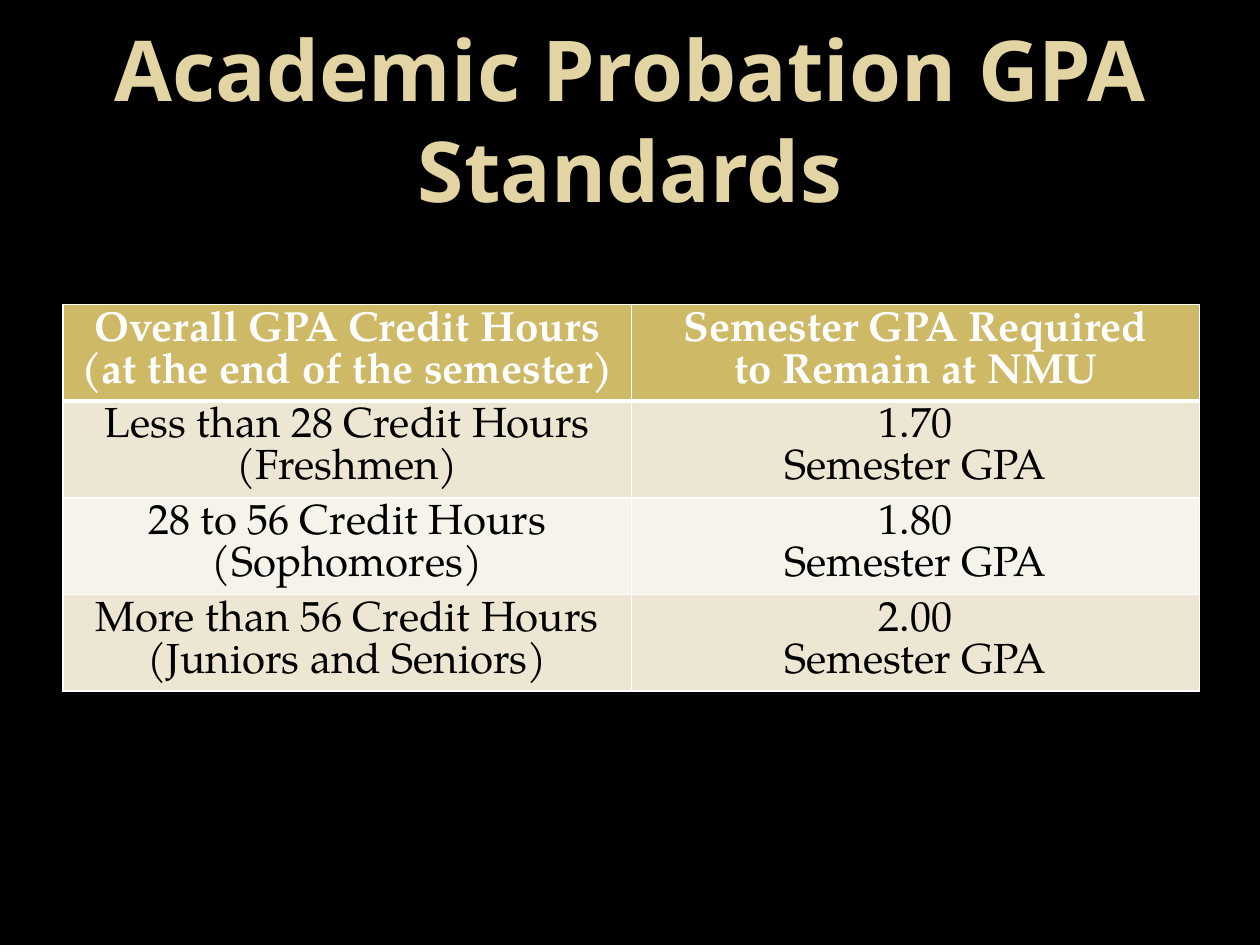
from dataclasses import dataclass

from lxml.etree import SubElement
from pptx import Presentation
from pptx.dml.color import RGBColor
from pptx.enum.text import MSO_ANCHOR, PP_ALIGN
from pptx.oxml.ns import qn
from pptx.util import Pt


@dataclass(frozen=True)
class Theme:
    background: str = "000000"
    title: str = "E2D5A3"
    header_fill: str = "CEB966"
    header_text: str = "FFFFFF"
    bands: tuple = ("EDE6D3", "F6F3EA")
    body_text: str = "000000"
    border: str = "FFFFFF"
    title_font: str = "Noto Sans"
    table_font: str = "TeX Gyre Pagella"
    title_size: float = 48
    title_spacing: float = 57.6
    table_size: float = 24
    table_spacing: float = 24


THEME = Theme()

STANDARDS = [
    ("Overall GPA Credit Hours\n(at the end of the semester)",
     "Semester GPA Required\nto Remain at NMU"),
    ("Less than 28 Credit Hours\n(Freshmen)", "1.70\nSemester GPA"),
    ("28 to 56 Credit Hours\n(Sophomores)", "1.80\nSemester GPA"),
    ("More than 56 Credit Hours\n(Juniors and Seniors)", "2.00\nSemester GPA"),
]


def write_text(tf, text, font, size, spacing, color, bold):
    tf.text = text
    for p in tf.paragraphs:
        p.alignment = PP_ALIGN.CENTER
        p.line_spacing = Pt(spacing)
        p.font.name = font
        p.font.size = Pt(size)
        p.font.bold = bold
        p.font.color.rgb = RGBColor.from_string(color)


def add_title(s, text):
    tf = s.shapes.add_textbox(Pt(36), Pt(18), Pt(648), Pt(90)).text_frame
    tf.word_wrap = True
    tf.vertical_anchor = MSO_ANCHOR.MIDDLE
    tf.margin_top, tf.margin_bottom = Pt(9), Pt(0)
    write_text(tf, text, THEME.title_font, THEME.title_size,
               THEME.title_spacing, THEME.title, True)


def set_borders(cell, top, bottom):
    tc_pr = cell._tc.get_or_add_tcPr()
    widths = {"a:lnL": 1, "a:lnR": 1, "a:lnT": top, "a:lnB": bottom}
    for tag, width in widths.items():
        ln = SubElement(tc_pr, qn(tag), w=str(Pt(width)))
        fill = SubElement(ln, qn("a:solidFill"))
        SubElement(fill, qn("a:srgbClr"), val=THEME.border)


def style_cell(cell, text, row):
    header = row == 0
    write_text(cell.text_frame, text, THEME.table_font, THEME.table_size,
               THEME.table_spacing,
               THEME.header_text if header else THEME.body_text, header)
    set_borders(cell, top=3 if row == 1 else 1, bottom=3 if header else 1)
    color = THEME.header_fill if header else THEME.bands[(row - 1) % 2]
    cell.fill.solid()
    cell.fill.fore_color.rgb = RGBColor.from_string(color)


def add_standards_table(s, rows):
    row_height = 55.2
    table = s.shapes.add_table(len(rows), len(rows[0]), Pt(36), Pt(174),
                               Pt(649.5), Pt(row_height * len(rows))).table
    for i, texts in enumerate(rows):
        table.rows[i].height = Pt(row_height)
        for j, text in enumerate(texts):
            style_cell(table.cell(i, j), text, i)


def main():
    prs = Presentation()
    prs.slide_width, prs.slide_height = Pt(720), Pt(540)
    s = prs.slides.add_slide(prs.slide_layouts[6])
    s.background.fill.solid()
    s.background.fill.fore_color.rgb = RGBColor.from_string(THEME.background)
    add_title(s, "Academic Probation GPA Standards")
    add_standards_table(s, STANDARDS)
    prs.save("out.pptx")


if __name__ == "__main__":
    main()
